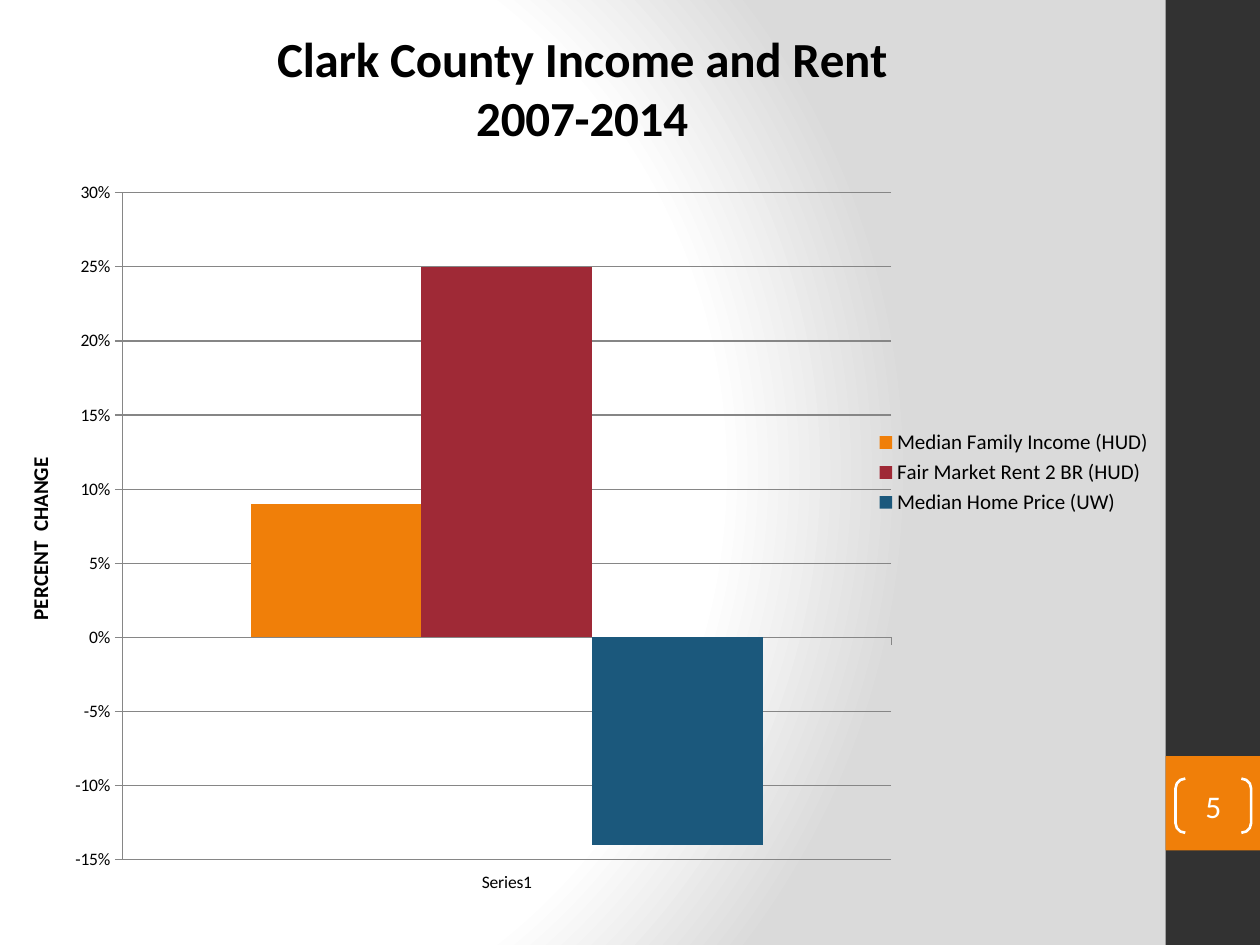
from dataclasses import dataclass

from pptx import Presentation
from pptx import util as u
from pptx.chart.data import CategoryChartData
from pptx.dml.color import RGBColor
from pptx.enum import chart as ch, shapes, text
from pptx.oxml import parse_xml
from pptx.oxml.ns import nsdecls, qn

SCALE = 9144  # EMU in one px, 100 px to the inch


@dataclass(frozen=True)
class Theme:
    face: str = "Calibri"
    ink: str = "000000"
    white: str = "FFFFFF"
    shade: str = "DADADA"
    dark: str = "323232"
    orange: str = "F07F09"
    red: str = "9F2936"
    blue: str = "1B587C"
    grid: str = "868686"
    head: int = 28
    page: int = 18
    label: int = 12
    tick: int = 10


def px(*sizes):
    return [u.Emu(size * SCALE) for size in sizes]


def put(item, **values):
    for name, value in values.items():
        setattr(item, name, value)


def place(parent, index, **parts):
    """Give a chart part a manual layout, as shares of the chart."""
    for old in parent.findall(qn("c:layout")):
        parent.remove(old)
    tags = "".join(f'<c:{tag} val="{value}"/>' for tag, value in parts.items())
    parent.insert(index, parse_xml(
        f'<c:layout {nsdecls("c")}><c:manualLayout>{tags}'
        "</c:manualLayout></c:layout>"))


class Deck:
    def __init__(self, theme):
        self.theme = theme
        self.show = Presentation()
        self.show.slide_width, self.show.slide_height = px(1000, 750)
        self.slide = self.show.slides.add_slide(self.show.slide_layouts[6])

    def font(self, font, size, color, bold=False):
        put(font, name=self.theme.face, size=u.Pt(size), bold=bold)
        font.color.rgb = RGBColor.from_string(color)

    def line(self, line, color, width):
        line.color.rgb = RGBColor.from_string(color)
        line.width = u.Pt(width)

    def glow(self, stops):
        """Fill the background with a round gradient."""
        self.slide.background.fill.gradient()
        old = self.slide.element.find(".//" + qn("a:gradFill"))
        marks = "".join(
            f'<a:gs pos="{pos * 1000}"><a:srgbClr val="{color}"/></a:gs>'
            for pos, color in stops)
        old.getparent().replace(old, parse_xml(
            f'<a:gradFill {nsdecls("a")} rotWithShape="1">'
            f'<a:gsLst>{marks}</a:gsLst><a:path path="circle">'
            '<a:fillToRect l="20000" t="50000" r="100000" b="50000"/>'
            "</a:path></a:gradFill>"))

    def block(self, box, color):
        shape = self.slide.shapes.add_shape(
            shapes.MSO_SHAPE.RECTANGLE, *px(*box))
        shape.shadow.inherit = False
        shape.fill.solid()
        shape.fill.fore_color.rgb = RGBColor.from_string(color)
        shape.line.fill.background()

    def badge(self, box, words):
        """Draw a pair of brackets around the page number."""
        shape = self.slide.shapes.add_shape(
            shapes.MSO_SHAPE.DOUBLE_BRACKET, *px(*box))
        shape.shadow.inherit = False
        shape.adjustments[0] = 0.18
        shape.fill.background()
        self.line(shape.line, self.theme.white, 1.5)
        frame = shape.text_frame
        put(frame, text=words, vertical_anchor=text.MSO_ANCHOR.MIDDLE,
            margin_left=0, margin_right=0, margin_top=0, margin_bottom=0)
        para = frame.paragraphs[0]
        para.alignment = text.PP_ALIGN.CENTER
        self.font(para.runs[0].font, self.theme.page, self.theme.white)

    def label(self, frame, words, size):
        frame.text = words
        for para in frame.paragraphs:
            self.font(para.font, size, self.theme.ink, True)
            for run in para.runs:
                self.font(run.font, size, self.theme.ink, True)

    def chart(self, box, title, group, rows):
        t = self.theme
        data = CategoryChartData(number_format="0%")
        data.categories = [group]
        for name, value, _ in rows:
            data.add_series(name, [value])
        chart = self.slide.shapes.add_chart(
            ch.XL_CHART_TYPE.COLUMN_CLUSTERED, *px(*box), data).chart
        self.font(chart.font, t.tick, t.ink)
        chart.has_title = True
        self.label(chart.chart_title.text_frame, title, t.head)
        chart.chart_title.include_in_layout = False

        chart.has_legend = True
        put(chart.legend, position=ch.XL_LEGEND_POSITION.RIGHT,
            include_in_layout=False)
        self.font(chart.legend.font, t.label, t.ink)

        plot = chart.plots[0]
        put(plot, gap_width=150, overlap=0, vary_by_categories=False)
        for series, (_, _, color) in zip(plot.series, rows):
            series.invert_if_negative = False
            series.format.fill.solid()
            series.format.fill.fore_color.rgb = RGBColor.from_string(color)

        base, side = chart.category_axis, chart.value_axis
        for axis in (base, side):
            put(axis, major_tick_mark=ch.XL_TICK_MARK.OUTSIDE,
                minor_tick_mark=ch.XL_TICK_MARK.NONE)
            self.font(axis.tick_labels.font, t.tick, t.ink)
            self.line(axis.format.line, t.grid, 0.75)
        base.tick_label_position = ch.XL_TICK_LABEL_POSITION.LOW
        put(side, minimum_scale=-0.15, maximum_scale=0.3, major_unit=0.05,
            has_major_gridlines=True, has_title=True)
        put(side.tick_labels, number_format="0%", number_format_is_linked=False)
        self.line(side.major_gridlines.format.line, t.grid, 0.75)
        self.label(side.axis_title.text_frame, "PERCENT  CHANGE", t.label)

        area = chart.element.find(".//" + qn("c:plotArea"))
        place(area, 0, layoutTarget="inner", xMode="edge", yMode="edge",
              x=0.106, y=0.204, w=0.659, h=0.706)
        place(area.find(".//" + qn("c:title")), 1,
              xMode="edge", yMode="edge", x=0.02, y=0.48)


def main():
    theme = Theme()
    deck = Deck(theme)
    deck.glow([(0, theme.white), (75, theme.white), (100, theme.shade)])
    deck.block((925, 0, 75, 750), theme.dark)
    deck.block((925, 600, 75, 75), theme.orange)
    deck.badge((933, 618, 60, 43), "5")
    deck.chart((-1, 0, 926, 750), "Clark County Income and Rent\n2007-2014",
               "Series1", [
                   ("Median Family Income (HUD)", 0.09, theme.orange),
                   ("Fair Market Rent 2 BR (HUD)", 0.25, theme.red),
                   ("Median Home Price (UW)", -0.14, theme.blue),
               ])
    deck.show.save("out.pptx")


if __name__ == "__main__":
    main()
